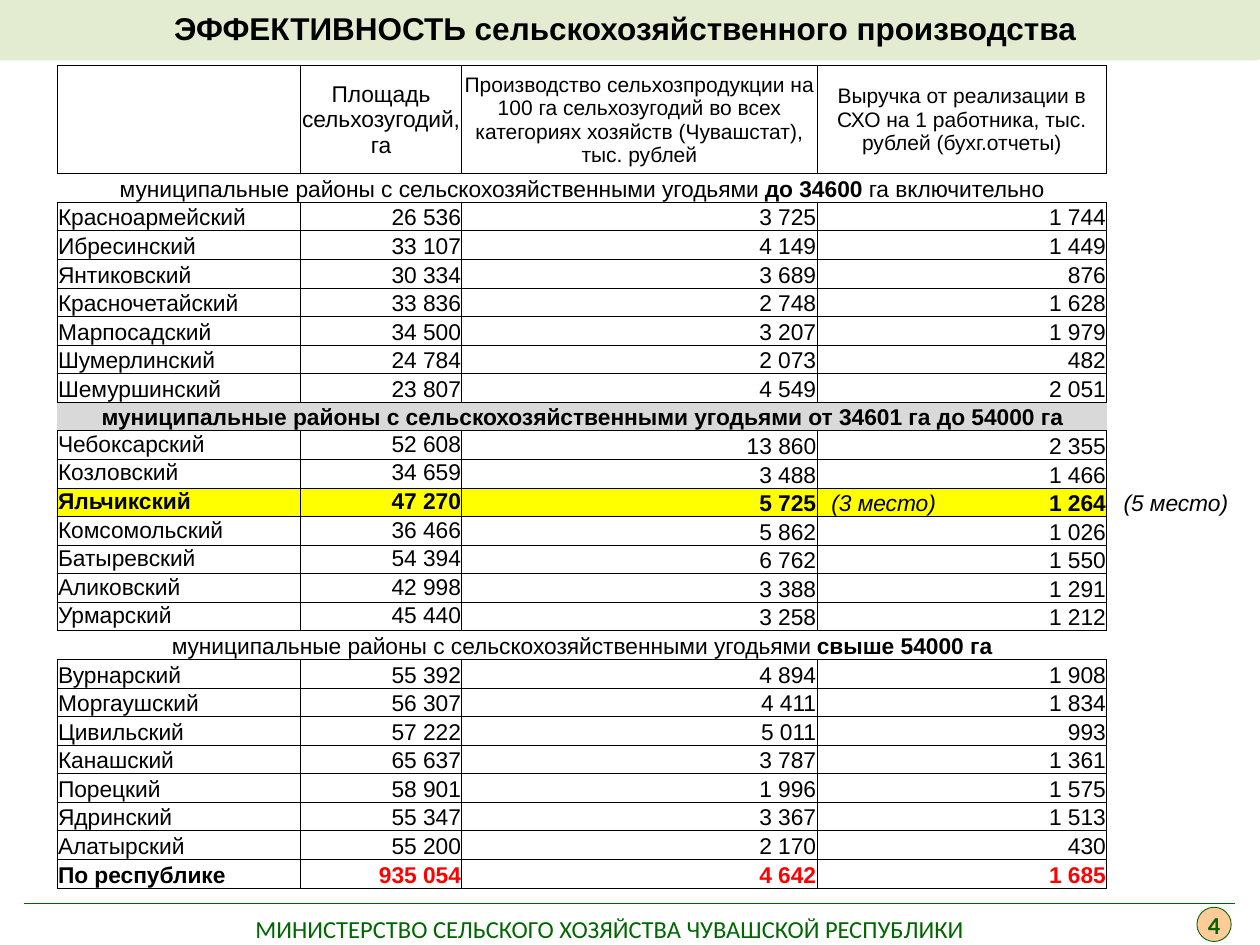
from dataclasses import dataclass

from lxml import etree
from pptx import Presentation
from pptx import util as u
from pptx.dml.color import RGBColor
from pptx.enum import shapes, text
from pptx.oxml.ns import qn


@dataclass(frozen=True)
class Theme:
    heading_font: str = "Arial"
    footer_font: str = "Calibri"
    black: str = "000000"
    band: str = "C3D69B"
    green: str = "006600"
    peach: str = "FFCC99"
    grey: str = "D9D9D9"
    yellow: str = "FFFF00"
    red: str = "FF0000"
    title_size: float = 18
    footer_size: float = 14
    body_size: float = 13
    small_size: float = 12
    border: float = 0.5
    rule: float = 0.75


@dataclass(frozen=True)
class Box:
    left: float
    top: float
    width: float
    height: float

    def emu(self):
        return [u.Cm(value) for value in (self.left, self.top, self.width, self.height)]

    def inner(self, left, top, width, height):
        return Box(self.left + left, self.top + top, width, height)


@dataclass(frozen=True)
class Section:
    caption: str
    rows: str
    fill: str = ""
    top_columns: int = 0


THEME = Theme()
LEFT, CENTER, RIGHT = text.PP_ALIGN.LEFT, text.PP_ALIGN.CENTER, text.PP_ALIGN.RIGHT
TOP, MIDDLE, BOTTOM = text.MSO_ANCHOR.TOP, text.MSO_ANCHOR.MIDDLE, text.MSO_ANCHOR.BOTTOM
COLUMN_WIDTHS = (4.9, 3.26, 7.16, 5.84)
HEADER_HEIGHT = 2.18
HEADERS = (
    "",
    "Площадь сельхозугодий, га",
    "Производство сельхозпродукции на 100 га сельхозугодий во всех категориях хозяйств (Чувашстат), тыс. рублей",
    "Выручка от реализации в СХО на 1 работника, тыс. рублей (бухг.отчеты)",
)
CAPTION = "муниципальные районы с сельскохозяйственными угодьями "
HIGHLIGHTED = "Яльчикский"
TOTAL = "По республике"
SECTIONS = (
    Section(CAPTION + "**до 34600 **га включительно", """\
Красноармейский|26 536|3 725|1 744
Ибресинский|33 107|4 149|1 449
Янтиковский|30 334|3 689|876
Красночетайский|33 836|2 748|1 628
Марпосадский|34 500|3 207|1 979
Шумерлинский|24 784|2 073|482
Шемуршинский|23 807|4 549|2 051"""),
    Section("**" + CAPTION + "от 34601 га до 54000 га", """\
Чебоксарский|52 608|13 860|2 355
Козловский|34 659|3 488|1 466
Яльчикский|47 270|5 725|1 264
Комсомольский|36 466|5 862|1 026
Батыревский|54 394|6 762|1 550
Аликовский|42 998|3 388|1 291
Урмарский|45 440|3 258|1 212""", THEME.grey, 2),
    Section(CAPTION + "**свыше 54000 га", """\
Вурнарский|55 392|4 894|1 908
Моргаушский|56 307|4 411|1 834
Цивильский|57 222|5 011|993
Канашский|65 637|3 787|1 361
Порецкий|58 901|1 996|1 575
Ядринский|55 347|3 367|1 513
Алатырский|55 200|2 170|430
По республике|935 054|4 642|1 685"""),
)


def rgb(color):
    return RGBColor.from_string(color)


def write(frame, content, size, color=THEME.black, font=THEME.heading_font,
          align=LEFT, bold=False, italic=False):
    paragraph = frame.paragraphs[0]
    paragraph.alignment = align
    for index, part in enumerate(content.split("**")):
        if part:
            run = paragraph.add_run()
            run.text = part
            if index % 2:
                run.font.bold = True
    paragraph.font.name = font
    paragraph.font.size = u.Pt(size)
    paragraph.font.color.rgb = rgb(color)
    paragraph.font.bold = bold
    paragraph.font.italic = italic


def add_text(parent, box, content, size, wrap=True, anchor=TOP, **style):
    frame = parent.add_textbox(*box.emu()).text_frame
    frame.word_wrap = wrap
    frame.vertical_anchor = anchor
    write(frame, content, size, **style)


def add_title(slide, box):
    band = slide.shapes.add_shape(shapes.MSO_SHAPE.ROUNDED_RECTANGLE, *box.emu())
    band.shadow.inherit = False
    band.fill.solid()
    band.fill.fore_color.rgb = rgb(THEME.band)
    color = band.fill._xPr.find(qn("a:solidFill"))[0]
    etree.SubElement(color, qn("a:alpha")).set("val", "46000")
    band.line.fill.background()
    band.text_frame.word_wrap = True
    band.text_frame.vertical_anchor = MIDDLE
    write(band.text_frame, "ЭФФЕКТИВНОСТЬ сельскохозяйственного производства",
          THEME.title_size, align=CENTER, bold=True)


def set_borders(cell, visible):
    properties = cell._tc.get_or_add_tcPr()
    for side in "LRTB":
        line = etree.SubElement(properties, qn(f"a:ln{side}"), w=str(u.Pt(THEME.border)))
        if side in visible:
            fill = etree.SubElement(line, qn("a:solidFill"))
            etree.SubElement(fill, qn("a:srgbClr"), val=THEME.black)
        else:
            etree.SubElement(line, qn("a:noFill"))


def format_cell(cell, content, anchor=BOTTOM, fill="", borders="LRTB",
                size=THEME.body_size, **style):
    cell.margin_left = cell.margin_right = cell.margin_top = u.Cm(0.02)
    cell.margin_bottom = 0
    cell.vertical_anchor = anchor
    set_borders(cell, borders)
    if fill:
        cell.fill.solid()
        cell.fill.fore_color.rgb = rgb(fill)
    else:
        cell.fill.background()
    write(cell.text_frame, content, size, **style)


def add_section(table, first_row, section):
    for column in range(len(COLUMN_WIDTHS)):
        format_cell(table.cell(first_row, column), "" if column else section.caption,
                    fill=section.fill, borders="TB", align=CENTER)
    table.cell(first_row, 0).merge(table.cell(first_row, len(COLUMN_WIDTHS) - 1))
    rows = section.rows.splitlines()
    for row, line in enumerate(rows, first_row + 1):
        values = line.split("|")
        name = values[0]
        for column, value in enumerate(values):
            format_cell(
                table.cell(row, column), value,
                anchor=TOP if column < section.top_columns else BOTTOM,
                fill=THEME.yellow if name == HIGHLIGHTED else "",
                color=THEME.red if name == TOTAL and column else THEME.black,
                align=RIGHT if column else LEFT,
                bold=name in (HIGHLIGHTED, TOTAL))
    return first_row + 1 + len(rows)


def add_efficiency_table(slide, box):
    row_count = 1 + sum(1 + len(section.rows.splitlines()) for section in SECTIONS)
    table = slide.shapes.add_table(row_count, len(COLUMN_WIDTHS), *box.emu()).table
    table.first_row = table.horz_banding = False
    for column, width in zip(table.columns, COLUMN_WIDTHS):
        column.width = u.Cm(width)
    for row in table.rows:
        row.height = u.Cm((box.height - HEADER_HEIGHT) / (row_count - 1))
    table.rows[0].height = u.Cm(HEADER_HEIGHT)
    for column, header in enumerate(HEADERS):
        format_cell(table.cell(0, column), header, anchor=MIDDLE, align=CENTER,
                    size=THEME.body_size if column < 2 else THEME.small_size)
    next_row = 1
    for section in SECTIONS:
        next_row = add_section(table, next_row, section)


def add_places(slide, box):
    for offset, place in ((0, "(3 место)"), (5.89, "(5 место)")):
        add_text(slide.shapes, box.inner(offset, 0, 2.8, box.height), place,
                 THEME.body_size, italic=True)


def add_footer(slide, box):
    parts = slide.shapes.add_group_shape().shapes
    badge = parts.add_shape(shapes.MSO_SHAPE.OVAL, *box.inner(23.65, 0.08, 0.69, 0.69).emu())
    badge.shadow.inherit = False
    badge.fill.solid()
    badge.fill.fore_color.rgb = rgb(THEME.peach)
    badge.line.color.rgb = rgb(THEME.green)
    badge.line.width = u.Pt(THEME.border)
    add_text(parts, box.inner(23.32, 0.23, 1.35, 0.41), "4", THEME.footer_size, anchor=MIDDLE,
             color=THEME.green, font=THEME.footer_font, align=CENTER, bold=True)
    left, top, width, _ = box.emu()
    rule = parts.add_connector(shapes.MSO_CONNECTOR.STRAIGHT, left, top, left + width, top)
    rule.line.color.rgb = rgb(THEME.green)
    rule.line.width = u.Pt(THEME.rule)
    etree.SubElement(rule._element.spPr, qn("a:effectLst"))
    add_text(parts, box.inner(4.42, 0.1, 15.01, 0.86),
             "МИНИСТЕРСТВО СЕЛЬСКОГО ХОЗЯЙСТВА ЧУВАШСКОЙ РЕСПУБЛИКИ", THEME.footer_size,
             wrap=False, color=THEME.green, font=THEME.footer_font)


def main():
    presentation = Presentation()
    presentation.slide_width, presentation.slide_height = u.Cm(25.4), u.Cm(19.05)
    slide = presentation.slides.add_slide(presentation.slide_layouts[6])
    add_title(slide, Box(-0.3, -0.08, 25.81, 1.3))
    add_footer(slide, Box(0.48, 18.21, 24.41, 0.96))
    add_efficiency_table(slide, Box(1.15, 1.32, 21.16, 16.59))
    add_places(slide, Box(16.51, 9.73, 8.69, 0.81))
    presentation.save("out.pptx")


if __name__ == "__main__":
    main()
